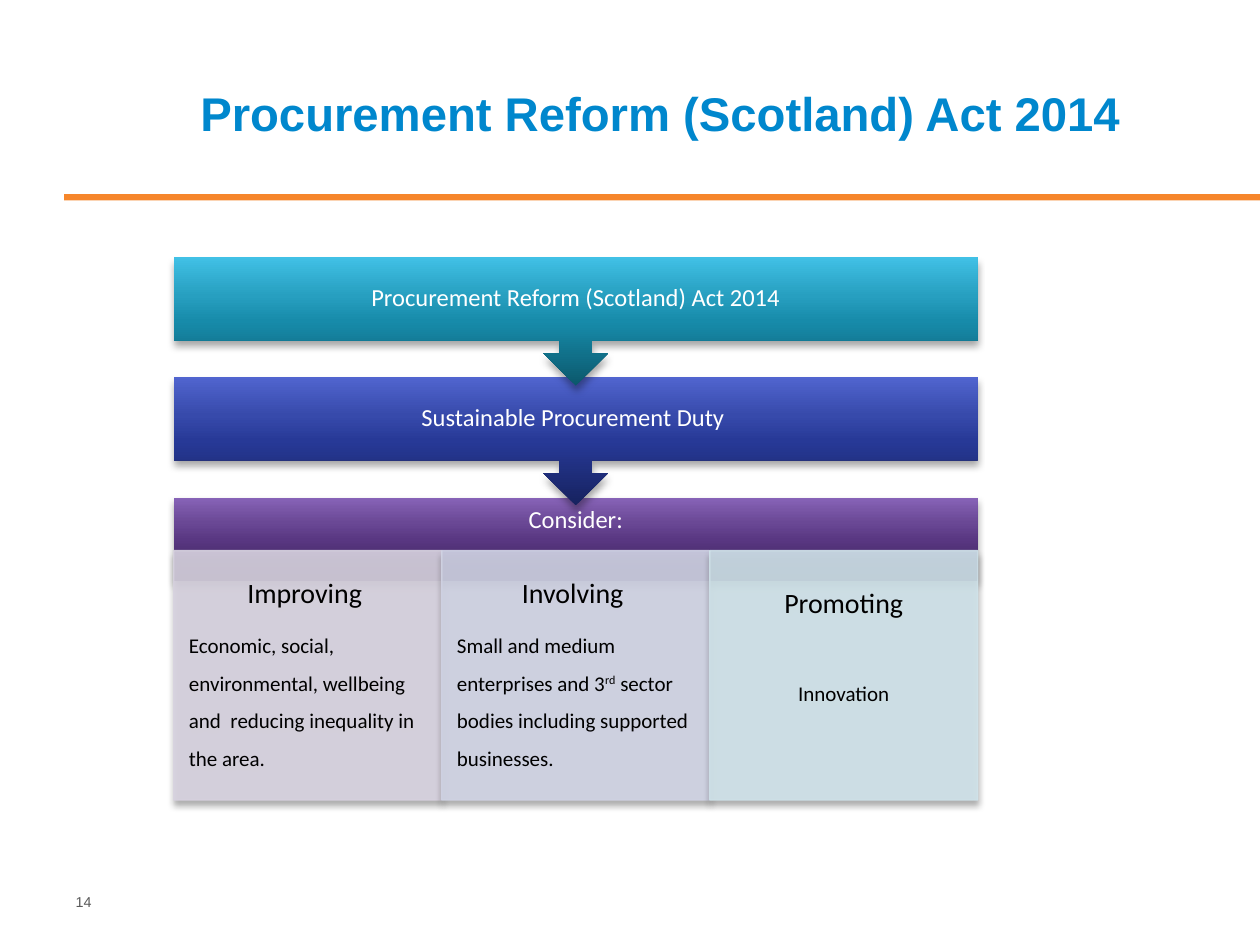
from dataclasses import dataclass

from lxml import etree
from pptx import Presentation
from pptx.dml.color import RGBColor
from pptx.enum.shapes import MSO_SHAPE as SHAPE
from pptx.enum.text import MSO_ANCHOR as ANCHOR, PP_ALIGN as ALIGN
from pptx.oxml.ns import qn
from pptx.util import Inches, Pt


@dataclass(frozen=True)
class Theme:
    title: str = "0087CD"
    rule: str = "F6862B"
    number: str = "595959"
    light: str = "FFFFFF"
    dark: str = "000000"
    act: tuple = ("0B586C", "178BAA", "279FC0", "41C1E6")
    duty: tuple = ("16225F", "273997", "374AAB", "5165CF")
    consider: tuple = ("372152", "593782", "6A4895", "8763B7")
    heading_font: str = "Arial"
    body_font: str = "Calibri"
    title_size: float = 27
    step_size: float = 14
    card_heading: float = 16
    card_body: float = 12
    number_size: float = 8.2


T = Theme()
STOPS = (0, 50, 70, 100)
TITLE = "Procurement Reform (Scotland) Act 2014"
# Heading, body runs as (text, superscript), fill
CARDS = [
    ("Improving ", [("Economic, social, environmental, wellbeing and  reducing "
                     "inequality in the area.", False)], "D8D3E0"),
    ("Involving ", [("Small and medium enterprises and 3", False), ("rd", True),
                    (" sector bodies including supported businesses.", False)], "D1D4E5"),
    ("Promoting", [("Innovation", False)], "D0E3EA"),
]


def sub(parent, tag, **attrs):
    return etree.SubElement(parent, qn(tag), {k: str(v) for k, v in attrs.items()})


def add_shadow(sp):
    sp.shadow.inherit = False
    effects = sp._element.spPr.find(qn("a:effectLst"))
    shadow = sub(effects, "a:outerShdw", blurRad=Pt(4), dist=Pt(3), dir=90 * 60000,
                 rotWithShape=0)
    sub(sub(shadow, "a:srgbClr", val=T.dark), "a:alpha", val=35000)


def fill_gradient(sp, colors):
    sp.fill.gradient()
    sp.fill.gradient_angle = 90
    stops = sp._element.spPr.find(qn("a:gradFill")).find(qn("a:gsLst"))
    for old in list(stops):
        stops.remove(old)
    for pos, color in zip(STOPS, colors):
        sub(sub(stops, "a:gs", pos=pos * 1000), "a:srgbClr", val=color)


def set_frame(sp, insets, anchor):
    """Insets are left, top, right, bottom in inches."""
    tf = sp.text_frame
    tf.word_wrap = True
    tf.vertical_anchor = anchor
    tf.margin_left, tf.margin_top, tf.margin_right, tf.margin_bottom = map(Inches, insets)
    return tf


def style(p, size, color, font=T.body_font, bold=False, align=ALIGN.LEFT):
    p.alignment = align
    p.font.size, p.font.name, p.font.bold = Pt(size), font, bold
    p.font.color.rgb = RGBColor.from_string(color)


def add_label(s, box, text, size, color, insets, anchor=ANCHOR.TOP, bold=False):
    tf = set_frame(s.shapes.add_textbox(*map(Inches, box)), insets, anchor)
    p = tf.paragraphs[0]
    p.text = text
    style(p, size, color, T.heading_font, bold)


def add_rule(s, box):
    sp = s.shapes.add_shape(SHAPE.RECTANGLE, *map(Inches, box))
    sp.shadow.inherit = False
    sp.fill.solid()
    sp.fill.fore_color.rgb = RGBColor.from_string(T.rule)
    sp.line.fill.background()


def add_step(s, box, kind, text, colors, insets):
    sp = s.shapes.add_shape(kind, *map(Inches, box))
    fill_gradient(sp, colors)
    sp.line.fill.background()
    add_shadow(sp)
    p = set_frame(sp, insets, ANCHOR.MIDDLE).paragraphs[0]
    p.text = text
    p.line_spacing = 0.9
    style(p, T.step_size, T.light, align=ALIGN.CENTER)


def add_card(s, box, heading, runs, color):
    sp = s.shapes.add_shape(SHAPE.RECTANGLE, *map(Inches, box))
    for fill in (sp.fill, sp.line.fill):
        fill.solid()
        fill.fore_color.rgb = RGBColor.from_string(color)
    sp.line.width = Pt(0.75)
    for clr in sp._element.spPr.iter(qn("a:srgbClr")):
        sub(clr, "a:alpha", val=90000)
    add_shadow(sp)

    single_word = len(runs) == 1 and " " not in runs[0][0]
    tf = set_frame(sp, (0.12, 0.02, 0.12, 0.46 if single_word else 0.02), ANCHOR.MIDDLE)
    p = tf.paragraphs[0]
    p.text = heading
    p.line_spacing = 0.9
    p.space_after = Pt(36.6 if single_word else 5.6)
    style(p, T.card_heading, T.dark, align=ALIGN.CENTER)

    p = tf.add_paragraph()
    p.line_spacing = 0.9 if single_word else 1.5
    for text, superscript in runs:
        r = p.add_run()
        r.text = text
        if superscript:
            r.font._element.set("baseline", "30000")
    style(p, T.card_body, T.dark, align=ALIGN.CENTER if single_word else ALIGN.LEFT)


def add_flow(s, left, top, width):
    """Two callout steps leading to a header over a row of cards."""
    pitch, callout_h = 0.95, 1.02
    add_step(s, (left, top + 2 * pitch + 0.01, width, 0.66), SHAPE.RECTANGLE,
             "Consider:", T.consider, (0.11, 0, 0.11, 0.3))
    card_w = width / len(CARDS)
    for i, card in enumerate(CARDS):
        add_card(s, (left + i * card_w, top + 2.33, card_w, 1.98), *card)
    steps = [(TITLE, T.act), ("Sustainable Procurement Duty ", T.duty)]
    for i, (text, colors) in reversed(list(enumerate(steps))):
        add_step(s, (left, top + i * pitch, width, callout_h),
                 SHAPE.DOWN_ARROW_CALLOUT, text, colors, (0.11,) * 4)


def main():
    prs = Presentation()
    prs.slide_width, prs.slide_height = Inches(10), Inches(7.5)
    s = prs.slides.add_slide(prs.slide_layouts[6])
    add_label(s, (0.51, 7.05, 5.48, 0.4), "14", T.number_size, T.number,
              (0.09, 0.04, 0.09, 0.04))
    add_rule(s, (0.51, 1.54, 9.49, 0.05))
    add_label(s, (1.52, 0.6, 7.74, 0.59), TITLE, T.title_size, T.title,
              (0.07, 0.04, 0.07, 0.04), ANCHOR.MIDDLE, bold=True)
    add_flow(s, 1.38, 2.04, 6.38)
    prs.save("out.pptx")


if __name__ == "__main__":
    main()
